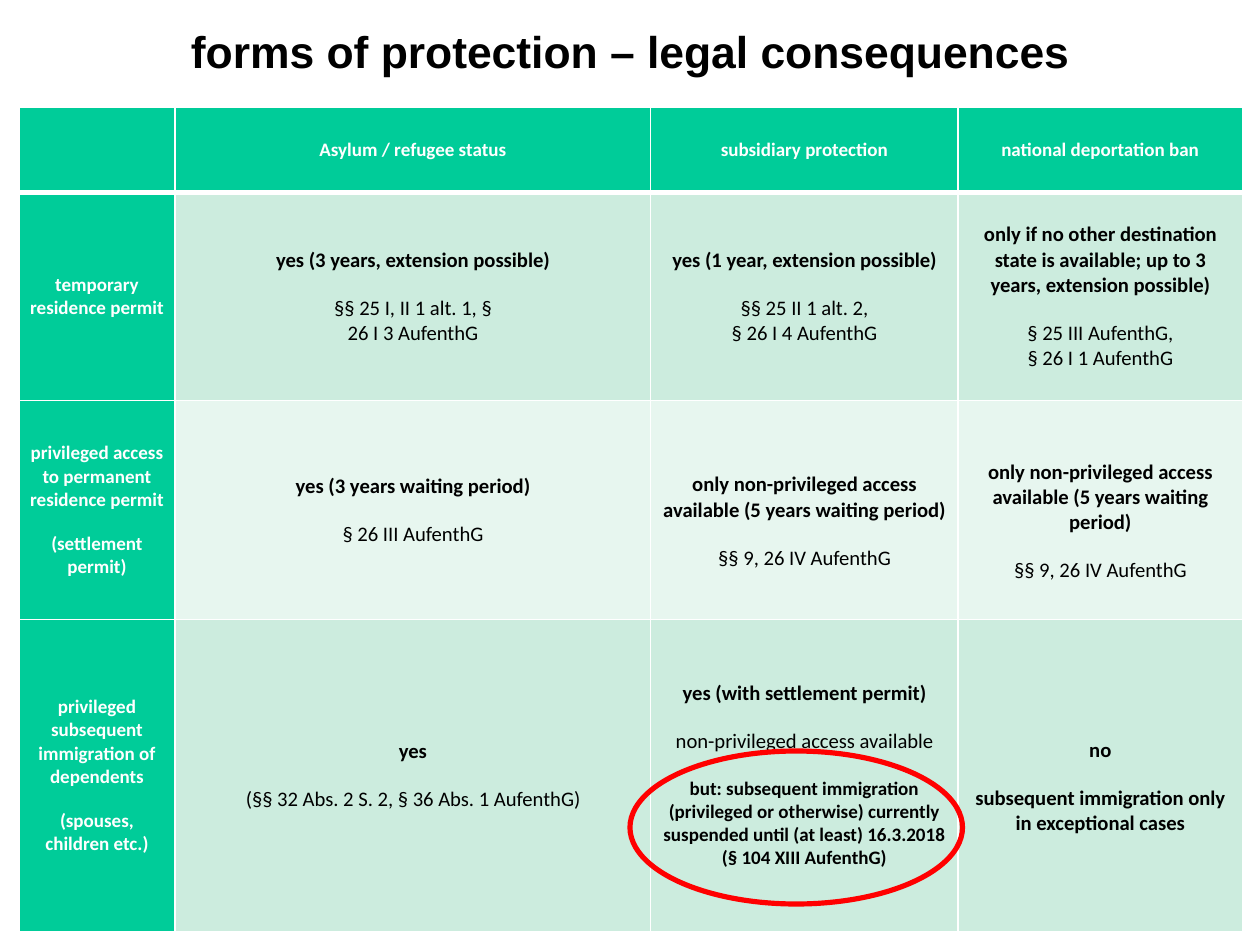
from dataclasses import dataclass

from lxml.etree import SubElement
from pptx import Presentation
from pptx.dml.color import RGBColor as RGB
from pptx.enum.shapes import MSO_SHAPE as Shape
from pptx.enum.text import MSO_ANCHOR as Anchor, MSO_AUTO_SIZE as AutoSize, PP_ALIGN as Align
from pptx.oxml.ns import qn
from pptx.table import _Cell as TableCell
from pptx.text.text import _Paragraph as TextPara
from pptx.util import Cm, Pt


@dataclass(frozen=True)
class Theme:
    green: str = "00CC99"
    bands: tuple[str, str] = ("CCECDE", "E7F6EF")
    white: str = "FFFFFF"
    black: str = "000000"
    red: str = "FF0000"
    title_font: str = "Arial"
    body_font: str = "Calibri"
    title_size: float = 28
    label_size: float = 12
    body_size: float = 13
    label_gap: float = 13
    body_gap: float = 14.4
    rule: float = 1
    header_rule: float = 3
    ring: float = 3.25


@dataclass(frozen=True)
class Line:
    text: str
    bold: bool = True
    gap: bool = False
    small: bool = False


@dataclass(frozen=True)
class Entry:
    lines: tuple[Line, ...] = ()
    drop: float = 0


THEME = Theme()
COL_WIDTHS = (3.47, 10.57, 6.83, 6.32)
ROW_HEIGHTS = (1.9, 4.62, 4.87, 6.93)


def entry(*lines: Line, drop: float = 0) -> Entry:
    return Entry(lines, drop)


def law(text: str, gap: bool = True) -> Line:
    return Line(text, bold=False, gap=gap)


NON_PRIVILEGED = entry(
    Line("only non-privileged access available (5 years waiting period)"),
    law("§§ 9, 26 IV AufenthG"),
    drop=THEME.body_gap,
)

ROWS = (
    (
        entry(),
        entry(Line("Asylum / refugee status")),
        entry(Line("subsidiary protection")),
        entry(Line("national deportation ban")),
    ),
    (
        entry(Line("temporary residence permit")),
        entry(Line("yes (3 years, extension possible)"),
              law("§§ 25 I, II 1 alt. 1, §"), law("26 I 3 AufenthG", gap=False)),
        entry(Line("yes (1 year, extension possible)"),
              law("§§ 25 II 1 alt. 2,"), law("§ 26 I 4 AufenthG", gap=False)),
        entry(Line("only if no other destination state is available; "
                   "up to 3 years, extension possible)"),
              law("§ 25 III AufenthG,"), law("§ 26 I 1 AufenthG", gap=False)),
    ),
    (
        entry(Line("privileged access to permanent residence permit"),
              Line("(settlement permit)", gap=True)),
        entry(Line("yes (3 years waiting period)"), law("§ 26 III AufenthG")),
        NON_PRIVILEGED,
        NON_PRIVILEGED,
    ),
    (
        entry(Line("privileged subsequent immigration of dependents"),
              Line("(spouses,", gap=True), Line("children etc.)")),
        entry(Line("yes"), law("(§§ 32 Abs. 2 S. 2, § 36 Abs. 1 AufenthG)")),
        entry(Line("yes (with settlement permit)"),
              law("non-privileged access available"),
              Line("but: subsequent immigration (privileged or otherwise) currently "
                   "suspended until (at least) 16.3.2018 (§ 104 XIII AufenthG)",
                   gap=True, small=True)),
        entry(Line("no"),
              Line("subsequent immigration only in exceptional cases", gap=True),
              drop=THEME.body_gap),
    ),
)


def apply(target: object, formats: dict[str, object]) -> None:
    for name, value in formats.items():
        setattr(target, name, value)


def write(p: TextPara, text: str, font: str, size: float, color: str, bold: bool) -> None:
    p.alignment = Align.CENTER
    r = p.add_run()
    r.text = text
    apply(r.font, {"name": font, "size": Pt(size), "bold": bold})
    r.font.color.rgb = RGB.from_string(color)


def add_borders(cell: TableCell, row: int) -> None:
    tc_pr = cell._tc.get_or_add_tcPr()
    widths = {
        "a:lnL": THEME.rule,
        "a:lnR": THEME.rule,
        "a:lnT": THEME.header_rule if row == 1 else THEME.rule,
        "a:lnB": THEME.header_rule if row == 0 else THEME.rule,
    }
    for i, (tag, width) in enumerate(widths.items()):
        ln = SubElement(tc_pr, qn(tag), w=str(int(Pt(width))))
        SubElement(SubElement(ln, qn("a:solidFill")), qn("a:srgbClr"), val=THEME.white)
        tc_pr.insert(i, ln)


def fill_cell(cell: TableCell, item: Entry, row: int, col: int) -> None:
    label = row == 0 or col == 0
    cell.fill.solid()
    fill = THEME.green if label else THEME.bands[(row - 1) % 2]
    cell.fill.fore_color.rgb = RGB.from_string(fill)
    apply(cell, {
        "vertical_anchor": Anchor.MIDDLE,
        "margin_left": Cm(0.25),
        "margin_right": Cm(0.25),
        "margin_top": Cm(0.13) + Pt(item.drop),
        "margin_bottom": Cm(0.13),
    })
    tf = cell.text_frame
    for i, line in enumerate(item.lines):
        p = tf.paragraphs[0] if i == 0 else tf.add_paragraph()
        if line.gap:
            p.space_before = Pt(THEME.label_gap if label else THEME.body_gap)
        size = THEME.label_size if label or line.small else THEME.body_size
        color = THEME.white if label else THEME.black
        write(p, line.text, THEME.body_font, size, color, line.bold)
    add_borders(cell, row)


def main() -> None:
    prs = Presentation()
    apply(prs, {"slide_width": Cm(28), "slide_height": Cm(21)})
    s = prs.slides.add_slide(prs.slide_layouts[5])

    title = s.shapes.title
    apply(title, {"left": Cm(1.1), "top": Cm(0.4), "width": Cm(25.8), "height": Cm(1.46)})
    tf = title.text_frame
    apply(tf, {"word_wrap": True, "auto_size": AutoSize.NONE,
               "vertical_anchor": Anchor.MIDDLE, "margin_top": 0, "margin_bottom": 0})
    write(tf.paragraphs[0], "forms of protection – legal consequences",
          THEME.title_font, THEME.title_size, THEME.black, True)

    table = s.shapes.add_table(
        len(ROWS), len(COL_WIDTHS), Cm(0.42), Cm(2.38),
        Cm(sum(COL_WIDTHS)), Cm(sum(ROW_HEIGHTS)),
    ).table
    for column, width in zip(table.columns, COL_WIDTHS):
        column.width = Cm(width)
    for i, (height, entries) in enumerate(zip(ROW_HEIGHTS, ROWS)):
        table.rows[i].height = Cm(height)
        for j, item in enumerate(entries):
            fill_cell(table.cell(i, j), item, i, j)

    ring = s.shapes.add_shape(Shape.OVAL, Cm(14), Cm(16.69), Cm(7.39), Cm(3.4))
    ring.shadow.inherit = False
    ring.fill.background()
    ring.line.color.rgb = RGB.from_string(THEME.red)
    ring.line.width = Pt(THEME.ring)

    prs.save("out.pptx")


if __name__ == "__main__":
    main()
